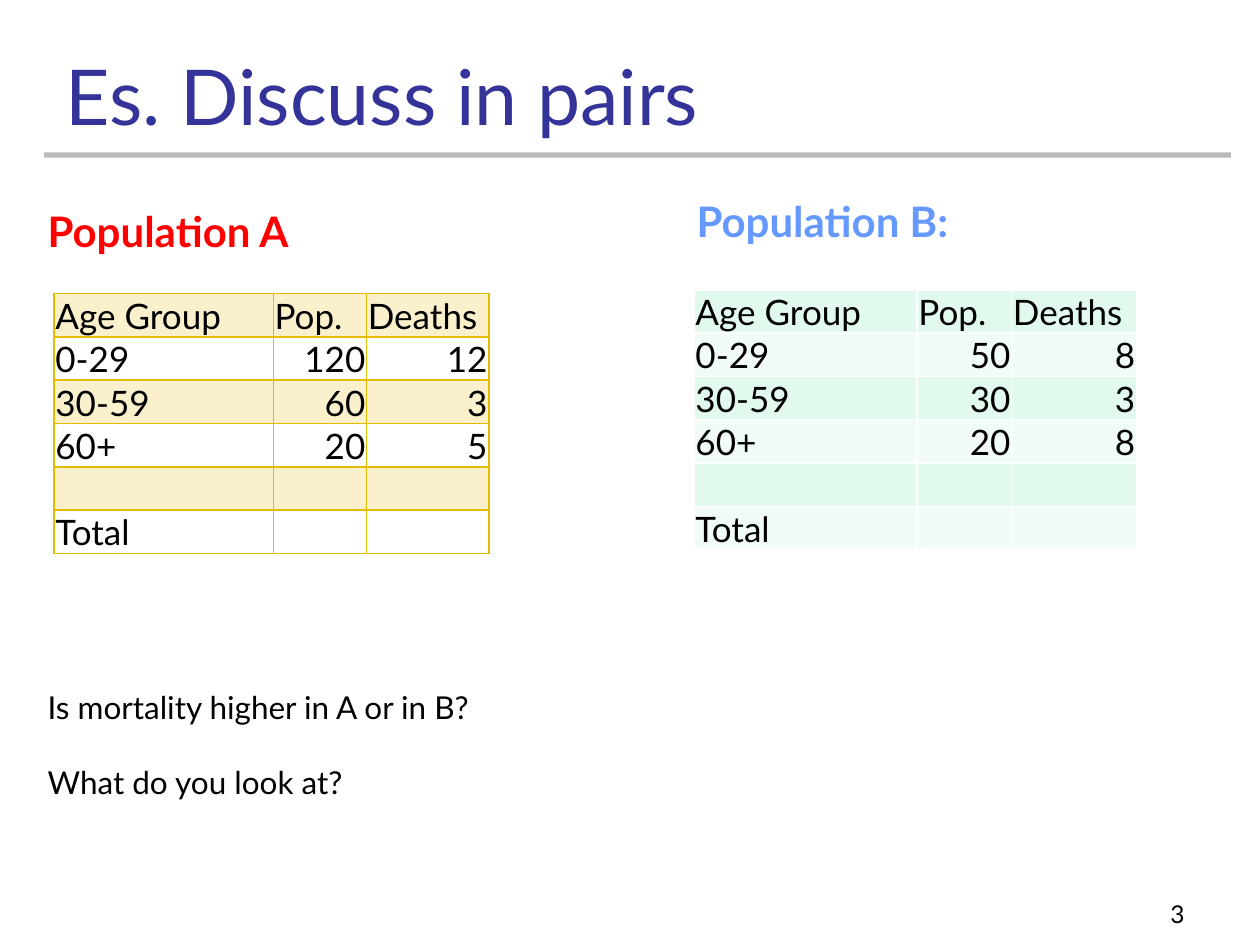
import pptx
import pptx.dml.color
import pptx.enum.shapes
import pptx.enum.text
import pptx.oxml
import pptx.oxml.ns
import pptx.util
from pptx.util import Inches

RGBColor = pptx.dml.color.RGBColor
Align = pptx.enum.text.PP_ALIGN
Anchor = pptx.enum.text.MSO_ANCHOR

FONT = "Lato"
BLACK = RGBColor(0x00, 0x00, 0x00)
WHITE = RGBColor(0xFF, 0xFF, 0xFF)
NAVY = RGBColor(0x33, 0x33, 0x99)
RED = RGBColor(0xFF, 0x00, 0x00)
BLUE = RGBColor(0x66, 0x99, 0xFF)
GRAY = RGBColor(0x77, 0x77, 0x77)
GOLD = RGBColor(0xE7, 0xBB, 0x01)
MINT = RGBColor(0xE2, 0xF9, 0xEE)
PALE_MINT = RGBColor(0xF1, 0xFC, 0xF7)


def add_run(paragraph, text, size, color, bold=False):
    run = paragraph.add_run()
    run.text = text
    run.font.name = FONT
    run.font.size = pptx.util.Pt(size)
    run.font.bold = bold
    run.font.color.rgb = color


def set_opacity(element, percent):
    color = next(element.iter(pptx.oxml.ns.qn("a:srgbClr")))
    alpha = pptx.oxml.parse_xml(
        f'<a:alpha {pptx.oxml.ns.nsdecls("a")} val="{percent * 1000}"/>')
    color.append(alpha)


presentation = pptx.Presentation()
presentation.slide_width = Inches(10)
presentation.slide_height = Inches(7.5)
slide = presentation.slides.add_slide(presentation.slide_layouts[6])

# Rule under the title
rule = slide.shapes.add_connector(
    pptx.enum.shapes.MSO_CONNECTOR.STRAIGHT,
    Inches(0.35), Inches(1.23), Inches(9.77), Inches(1.23))
rule.line.color.rgb = GRAY
rule.line.width = pptx.util.Pt(3)
set_opacity(rule.line._ln, 50)
rule._element.spPr.append(
    pptx.oxml.parse_xml(f'<a:effectLst {pptx.oxml.ns.nsdecls("a")}/>'))

# Title, headings, questions and slide number
texts = [
    ((0.42, 0.5, 8.52, 0.67), ["Es. Discuss in pairs"], 44, NAVY, False, Anchor.BOTTOM, Align.LEFT),
    ((0.28, 1.58, 4.17, 0.6), ["Population A"], 24, RED, True, Anchor.TOP, Align.LEFT),
    ((5.43, 1.5, 4.17, 0.6), ["Population B:"], 24, BLUE, True, Anchor.TOP, Align.LEFT),
    ((0.28, 5.41, 9.13, 1.31), ["Is mortality higher in A or in B?", "What do you look at?"],
     18, BLACK, False, Anchor.TOP, Align.LEFT),
    ((7.42, 6.92, 2.08, 0.5), ["3"], 14, BLACK, False, Anchor.BOTTOM, Align.RIGHT),
]
for box, lines, size, color, bold, anchor, alignment in texts:
    frame = slide.shapes.add_textbox(*[Inches(value) for value in box]).text_frame
    frame.word_wrap = True
    frame.vertical_anchor = anchor
    for index, line in enumerate(lines):
        paragraph = frame.add_paragraph() if index else frame.paragraphs[0]
        paragraph.alignment = alignment
        if index:
            paragraph.space_before = pptx.util.Pt(1.2 * size)
        add_run(paragraph, line, size, color, bold)

# Population tables: position, column widths, border, row fills, opacity, values
tables = [
    (0.43, 2.33, [1.74, 0.74, 0.97], GOLD, [GOLD, None], 20,
     [("120", "12"), ("60", "3"), ("20", "5")]),
    (5.51, 2.3, [1.77, 0.75, 0.99], WHITE, [MINT, PALE_MINT], 100,
     [("50", "8"), ("30", "3"), ("20", "8")]),
]
AGE_GROUPS = ["0-29", "30-59", "60+"]
for left, top, widths, border, fills, opacity, values in tables:
    rows = [("Age Group", "Pop.", "Deaths")]
    rows += [(group, *counts) for group, counts in zip(AGE_GROUPS, values)]
    rows += [("", "", ""), ("Total", "", "")]
    table = slide.shapes.add_table(
        len(rows), len(widths), Inches(left), Inches(top),
        Inches(sum(widths)), Inches(2.06)).table
    table.first_row = False
    table.horz_banding = False
    for column, width in zip(table.columns, widths):
        column.width = Inches(width)

    for row_index, row in enumerate(rows):
        for column_index, text in enumerate(row):
            cell = table.cell(row_index, column_index)
            cell.vertical_anchor = Anchor.BOTTOM
            cell.margin_left = cell.margin_right = cell.margin_top = Inches(0.01)
            cell.margin_bottom = 0
            paragraph = cell.text_frame.paragraphs[0]
            if row_index and column_index:
                paragraph.alignment = Align.RIGHT
            if text:
                add_run(paragraph, text, 20, BLACK)

            properties = cell._tc.get_or_add_tcPr()
            fill = fills[row_index % 2]
            if fill is None:
                cell.fill.background()
            else:
                cell.fill.solid()
                cell.fill.fore_color.rgb = fill
                if opacity < 100:
                    set_opacity(properties, opacity)
            for position, side in enumerate(["lnL", "lnR", "lnT", "lnB"]):
                properties.insert(position, pptx.oxml.parse_xml(
                    f'<a:{side} {pptx.oxml.ns.nsdecls("a")} w="12700"><a:solidFill>'
                    f'<a:srgbClr val="{border}"/></a:solidFill></a:{side}>'))

presentation.save("out.pptx")
